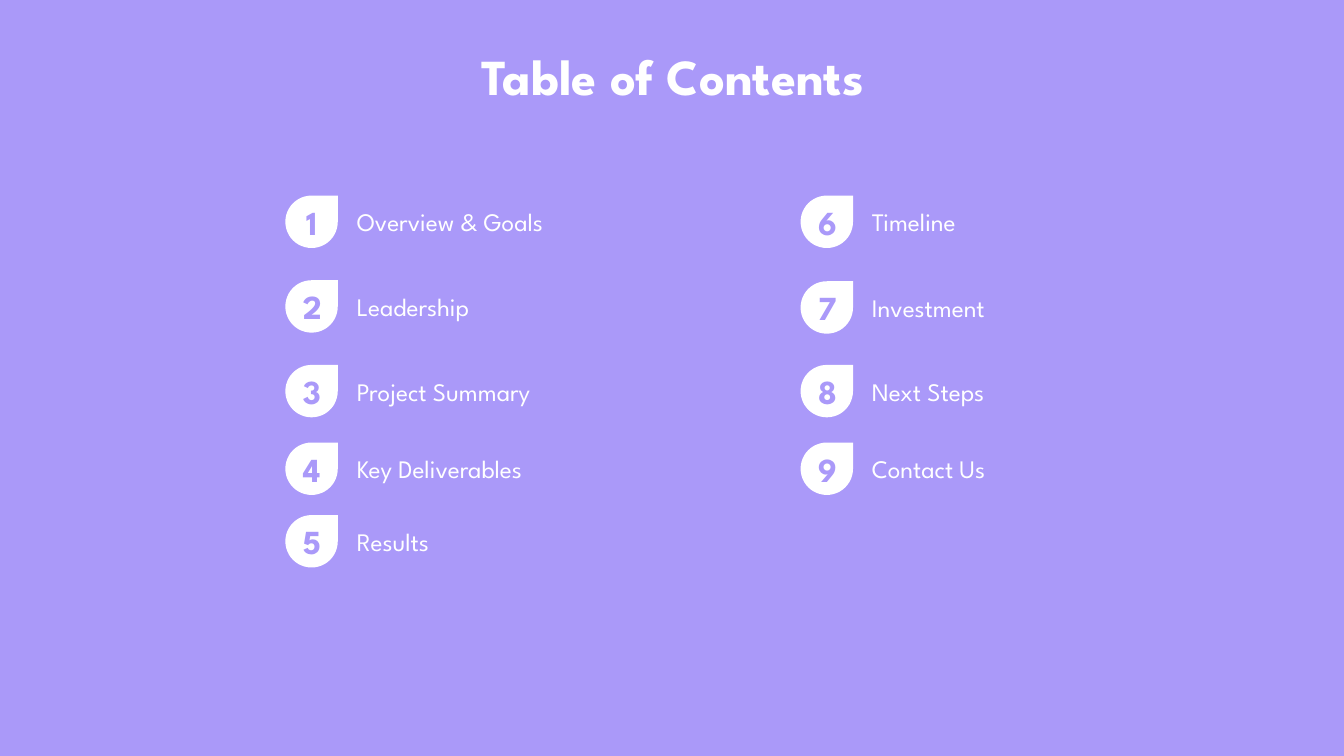
from dataclasses import dataclass

from pptx import Presentation
from pptx.dml.color import RGBColor
from pptx.enum.shapes import MSO_SHAPE
from pptx.enum.text import MSO_ANCHOR, MSO_AUTO_SIZE, PP_ALIGN
from pptx.slide import Slide
from pptx.text.text import TextFrame
from pptx.util import Emu, Pt

TEARDROP = MSO_SHAPE.TEAR
MIDDLE = MSO_ANCHOR.MIDDLE
GROW = MSO_AUTO_SIZE.SHAPE_TO_FIT_TEXT
LEFT, CENTER = PP_ALIGN.LEFT, PP_ALIGN.CENTER

EMU_PER_PX = 9144  # 100 px to the inch
FONT = "League Spartan"
LAVENDER, WHITE = "AA99F9", "FFFFFF"
BADGE_SIZE = 52
LABEL_OFFSET_X, LABEL_OFFSET_Y = 61, 6
LABEL_WIDTH, LABEL_HEIGHT = 351, 40


@dataclass(frozen=True)
class Entry:
    label: str
    top: int


@dataclass(frozen=True)
class Column:
    left: int
    entries: tuple[Entry, ...]


COLUMNS = (
    Column(283, (
        Entry("Overview & Goals", 194),
        Entry("Leadership", 278),
        Entry("Project Summary", 362),
        Entry("Key Deliverables", 439),
        Entry("Results", 511),
    )),
    Column(794, (
        Entry("Timeline", 194),
        Entry("Investment", 279),
        Entry("Next Steps", 362),
        Entry("Contact Us", 439),
    )),
)


def px(length: int) -> Emu:
    return Emu(length * EMU_PER_PX)


def color(value: str) -> RGBColor:
    return RGBColor.from_string(value)


def write(frame: TextFrame, text: str, size: int, text_color: str,
          bold: bool, alignment: PP_ALIGN) -> None:
    paragraph = frame.paragraphs[0]
    paragraph.text = text
    paragraph.alignment = alignment
    font = paragraph.font
    font.name = FONT
    font.size = Pt(size)
    font.bold = bold
    font.color.rgb = color(text_color)


def add_text(slide: Slide, text: str, left: int, top: int, width: int, height: int,
             size: int, bold: bool = False, alignment: PP_ALIGN = LEFT) -> None:
    frame = slide.shapes.add_textbox(px(left), px(top), px(width), px(height)).text_frame
    frame.word_wrap = True
    frame.auto_size = GROW
    write(frame, text, size, WHITE, bold, alignment)


def add_badge(slide: Slide, number: int, left: int, top: int) -> None:
    badge = slide.shapes.add_shape(TEARDROP, px(left), px(top), px(BADGE_SIZE), px(BADGE_SIZE))
    badge.shadow.inherit = False
    badge.fill.solid()
    badge.fill.fore_color.rgb = color(WHITE)
    badge.line.fill.background()
    badge.text_frame.vertical_anchor = MIDDLE
    write(badge.text_frame, str(number), 24, LAVENDER, True, CENTER)


def add_contents(slide: Slide) -> None:
    number = 1
    for column in COLUMNS:
        for entry in column.entries:
            add_badge(slide, number, column.left, entry.top)
            add_text(slide, entry.label, column.left + LABEL_OFFSET_X,
                     entry.top + LABEL_OFFSET_Y, LABEL_WIDTH, LABEL_HEIGHT, 18)
            number += 1


def main() -> None:
    presentation = Presentation()
    presentation.slide_width = px(1333)
    presentation.slide_height = px(750)
    slide = presentation.slides.add_slide(presentation.slide_layouts[6])
    background = slide.background.fill
    background.solid()
    background.fore_color.rgb = color(LAVENDER)
    add_text(slide, "Table of Contents", 141, 40, 1052, 71, 36, True, CENTER)
    add_contents(slide)
    presentation.save("out.pptx")


if __name__ == "__main__":
    main()
